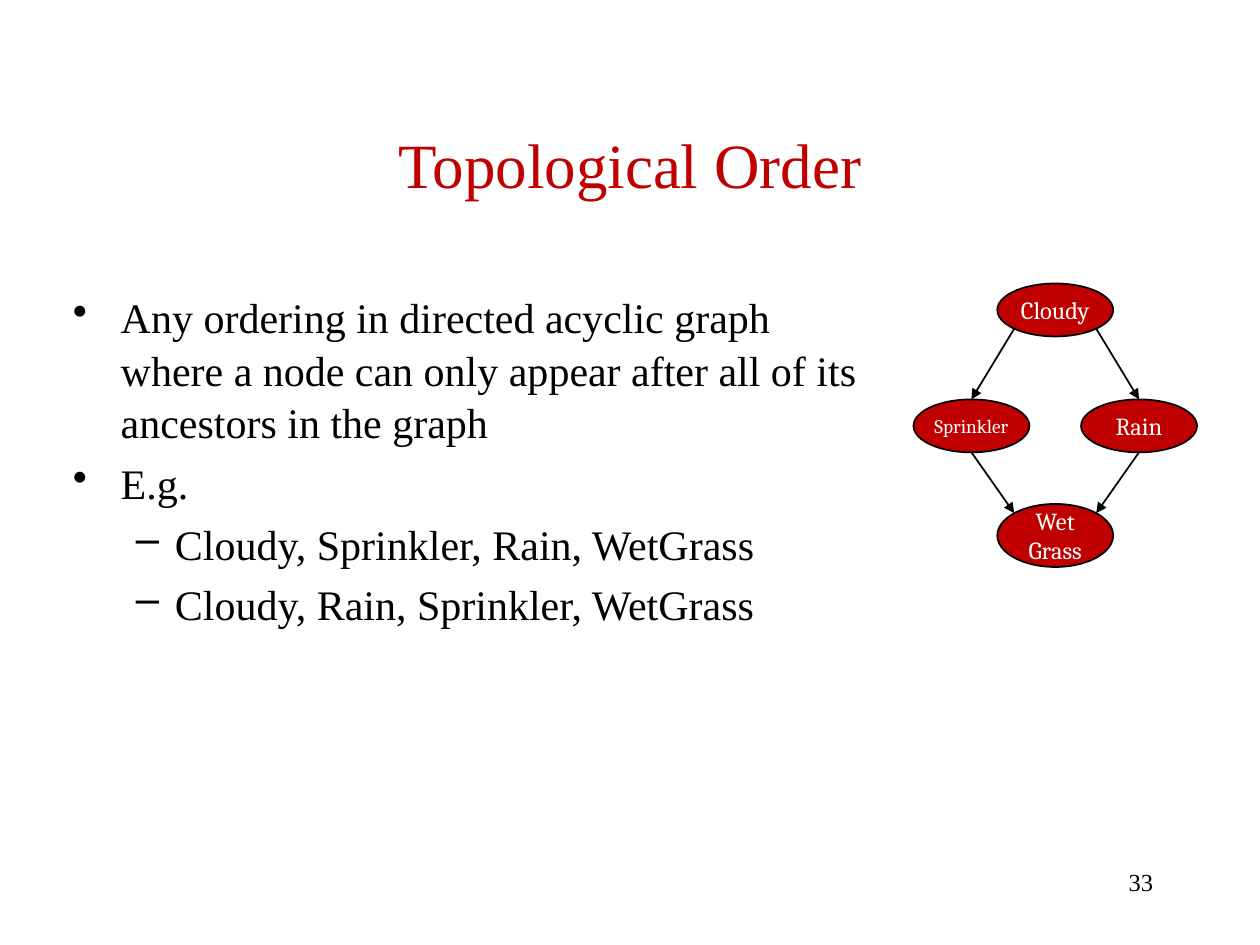
from lxml import etree
from pptx import Presentation
from pptx.dml.color import RGBColor
from pptx.enum.shapes import MSO_CONNECTOR, MSO_SHAPE
from pptx.enum.text import MSO_ANCHOR, PP_ALIGN
from pptx.oxml.ns import qn
from pptx.util import Inches, Pt

STRAIGHT = MSO_CONNECTOR.STRAIGHT
ELLIPSE = MSO_SHAPE.OVAL
MIDDLE = MSO_ANCHOR.MIDDLE
CENTER, RIGHT = PP_ALIGN.CENTER, PP_ALIGN.RIGHT

RED, BLACK, WHITE = "C00000", "000000", "FFFFFF"
SERIF, NODE_FONT = "Times New Roman", "Cambria"
DIAGONAL = 0.5 ** 0.5

BULLETS = [
    (0, "Any ordering in directed acyclic graph where a node can only "
        "appear after all of its ancestors in the graph"),
    (0, "E.g."),
    (1, "Cloudy, Sprinkler, Rain, WetGrass"),
    (1, "Cloudy, Rain, Sprinkler, WetGrass"),
]
BULLET_STYLES = [("•", 0.38, -0.38), ("–", 0.81, -0.31)]


def color(hex_value):
    return RGBColor.from_string(hex_value)


def format_text(paragraph, size, font_name, hex_value, alignment=None):
    paragraph.alignment = alignment
    for run in paragraph.runs:
        run.font.size = Pt(size)
        run.font.name = font_name
        run.font.color.rgb = color(hex_value)


def add_title(slide, left, top, width, height):
    title = slide.shapes.title
    title.left, title.top = Inches(left), Inches(top)
    title.width, title.height = Inches(width), Inches(height)
    title.text_frame.text = "Topological Order"
    title.text_frame.vertical_anchor = MIDDLE
    format_text(title.text_frame.paragraphs[0], 36, SERIF, RED, CENTER)


def set_bullet(paragraph, level):
    mark, margin, indent = BULLET_STYLES[level]
    paragraph.level = level
    properties = paragraph._p.get_or_add_pPr()
    properties.set("marL", str(Inches(margin)))
    properties.set("indent", str(Inches(indent)))
    etree.SubElement(properties, qn("a:buChar")).set("char", mark)


def add_bullets(slide, left, top, width, height):
    body = slide.shapes.add_textbox(
        Inches(left), Inches(top), Inches(width), Inches(height))
    frame = body.text_frame
    frame.word_wrap = True
    for index, (level, text) in enumerate(BULLETS):
        paragraph = frame.add_paragraph() if index else frame.paragraphs[0]
        paragraph.text = text
        set_bullet(paragraph, level)
        paragraph.line_spacing = 1.04
        if index:
            paragraph.space_before = Pt(4.8)
        format_text(paragraph, 24, SERIF, BLACK)


def add_node(slide, text, left, top, width, height, size=14):
    node = slide.shapes.add_shape(
        ELLIPSE, Inches(left), Inches(top), Inches(width), Inches(height))
    node.shadow.inherit = False
    node.fill.solid()
    node.fill.fore_color.rgb = color(RED)
    node.line.color.rgb = color(BLACK)
    node.line.width = Pt(1)
    frame = node.text_frame
    frame.margin_left = frame.margin_right = 0
    frame.margin_top = frame.margin_bottom = 0
    frame.word_wrap = True
    frame.vertical_anchor = MIDDLE
    frame.text = text
    format_text(frame.paragraphs[0], size, NODE_FONT, WHITE, CENTER)
    return node


def rim_point(node, across, down):
    return (int(node.left + node.width * (1 + across) / 2),
            int(node.top + node.height * (1 + down) / 2))


def add_arrow(slide, start, end):
    arrow = slide.shapes.add_connector(STRAIGHT, *start, *end)
    arrow.line.color.rgb = color(BLACK)
    arrow.line.width = Pt(1)
    line = arrow.line._get_or_add_ln()
    etree.SubElement(line, qn("a:tailEnd")).set("type", "triangle")
    etree.SubElement(arrow._element.spPr, qn("a:effectLst"))


def add_graph(slide, left, top, width, height):
    node_width, node_height, last_height = 0.92, 0.42, 0.5
    middle = left + (width - node_width) / 2
    right = left + width - node_width
    row = top + 0.92
    cloudy = add_node(slide, "Cloudy", middle, top, node_width, node_height)
    sprinkler = add_node(
        slide, "Sprinkler", left, row, node_width, node_height, 11)
    rain = add_node(slide, "Rain", right, row, node_width, node_height)
    wet_grass = add_node(slide, "Wet Grass", middle,
                         top + height - last_height, node_width, last_height)
    for node, side in ((sprinkler, -DIAGONAL), (rain, DIAGONAL)):
        add_arrow(slide, rim_point(cloudy, side, DIAGONAL),
                  rim_point(node, 0, -1))
        add_arrow(slide, rim_point(node, 0, 1),
                  rim_point(wet_grass, side, -DIAGONAL))


def add_page_number(slide, left, top, width, height):
    number = slide.shapes.add_textbox(
        Inches(left), Inches(top), Inches(width), Inches(height))
    number.text_frame.word_wrap = True
    number.text_frame.text = "33"
    format_text(number.text_frame.paragraphs[0], 14, SERIF, BLACK, RIGHT)


def main():
    presentation = Presentation()
    presentation.slide_width = Inches(10)
    presentation.slide_height = Inches(7.5)
    slide = presentation.slides.add_slide(presentation.slide_layouts[5])
    add_title(slide, 0.75, 0.67, 8.5, 1.25)
    add_bullets(slide, 0.48, 2.25, 6.58, 4.78)
    add_page_number(slide, 7.17, 6.83, 2.08, 0.5)
    add_graph(slide, 7.25, 2.25, 2.25, 2.25)
    presentation.save("out.pptx")


if __name__ == "__main__":
    main()
